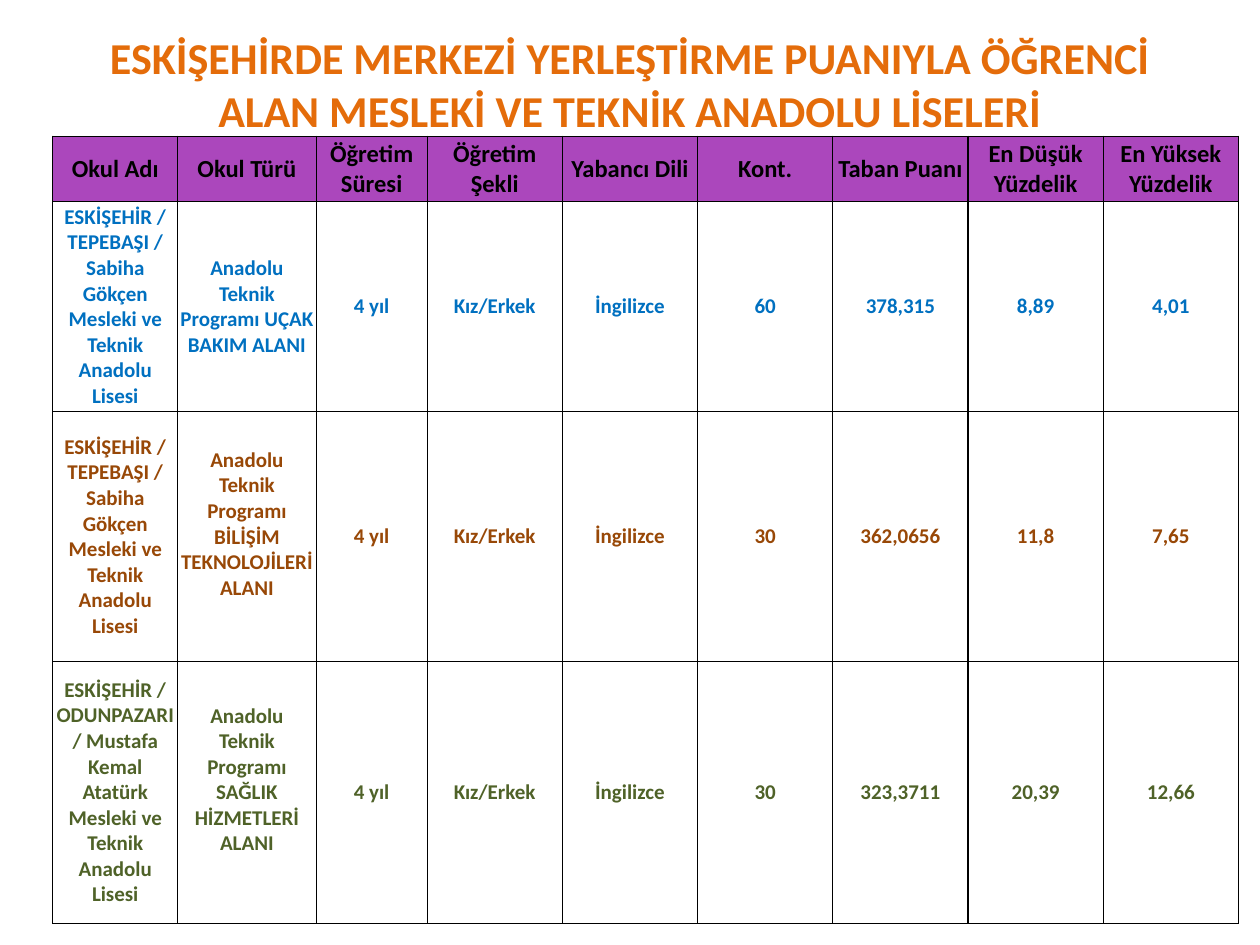
from lxml.etree import SubElement
from pptx import Presentation
from pptx.dml.color import RGBColor
from pptx.enum.text import MSO_ANCHOR, PP_ALIGN
from pptx.oxml.ns import qn
from pptx.util import Inches, Pt

ORANGE = RGBColor(0xE4, 0x6C, 0x0A)
PURPLE = RGBColor(0xAB, 0x47, 0xBC)
BLACK = RGBColor(0x00, 0x00, 0x00)
WHITE = RGBColor(0xFF, 0xFF, 0xFF)
BLUE = RGBColor(0x00, 0x70, 0xC0)
BROWN = RGBColor(0x98, 0x48, 0x07)
GREEN = RGBColor(0x4F, 0x62, 0x28)

HEADINGS = ["Okul Adı", "Okul Türü", "Öğretim Süresi", "Öğretim Şekli", "Yabancı Dili",
            "Kont.", "Taban Puanı", "En Düşük Yüzdelik", "En Yüksek Yüzdelik"]
COMMON = ["4 yıl", "Kız/Erkek", "İngilizce"]
SABIHA = "ESKİŞEHİR / TEPEBAŞI / Sabiha Gökçen Mesleki ve Teknik Anadolu Lisesi"
MUSTAFA = "ESKİŞEHİR / ODUNPAZARI / Mustafa Kemal Atatürk Mesleki ve Teknik Anadolu Lisesi"
PROGRAM = "Anadolu Teknik Programı "
ROWS = [
    (0.52, BLACK, HEADINGS),
    (1.67, BLUE, [SABIHA, PROGRAM + "UÇAK BAKIM ALANI", *COMMON,
                  "60", "378,315", "8,89", "4,01"]),
    (1.98, BROWN, [SABIHA, PROGRAM + "BİLİŞİM TEKNOLOJİLERİ ALANI", *COMMON,
                   "30", "362,0656", "11,8", "7,65"]),
    (2.08, GREEN, [MUSTAFA, PROGRAM + "SAĞLIK HİZMETLERİ ALANI", *COMMON,
                   "30", "323,3711", "20,39", "12,66"]),
]
TABLE_WIDTH = 9.41
FIRST_WIDTHS = [0.99, 1.1, 0.88]
EQUAL_COUNT = len(HEADINGS) - len(FIRST_WIDTHS)
WIDTHS = FIRST_WIDTHS + [(TABLE_WIDTH - sum(FIRST_WIDTHS)) / EQUAL_COUNT] * EQUAL_COUNT


def write(frame, text, size, color):
    para = frame.paragraphs[0]
    para.alignment = PP_ALIGN.CENTER
    span = para.add_run()
    span.text = text
    for name, value in {"name": "Calibri", "size": Pt(size), "bold": True}.items():
        setattr(span.font, name, value)
    span.font.color.rgb = color


def add_borders(cell):
    properties = cell._tc.get_or_add_tcPr()
    for position, side in enumerate(("lnL", "lnR", "lnT", "lnB")):
        line = SubElement(properties, qn(f"a:{side}"), w=str(Pt(0.75)))
        fill = SubElement(line, qn("a:solidFill"))
        SubElement(fill, qn("a:srgbClr"), val=str(BLACK))
        properties.insert(position, line)


deck = Presentation()
deck.slide_width, deck.slide_height = Inches(10), Inches(7.5)
page = deck.slides.add_slide(deck.slide_layouts[5])

title = page.shapes.title
for name, value in {"left": 0.5, "top": 0.08, "width": 9, "height": 1.17}.items():
    setattr(title, name, Inches(value))
title.text_frame.vertical_anchor = MSO_ANCHOR.MIDDLE
write(title.text_frame,
      "ESKİŞEHİRDE MERKEZİ YERLEŞTİRME PUANIYLA ÖĞRENCİ ALAN MESLEKİ VE TEKNİK ANADOLU LİSELERİ",
      25.2, ORANGE)

table = page.shapes.add_table(len(ROWS), len(HEADINGS), Inches(0.42), Inches(1.08),
                              Inches(TABLE_WIDTH), Inches(6.25)).table
table.horz_banding = False
for column, width in zip(table.columns, WIDTHS):
    column.width = Inches(width)

for row_index, (height, color, texts) in enumerate(ROWS):
    table.rows[row_index].height = Inches(height)
    is_header = row_index == 0
    for column_index, text in enumerate(texts):
        cell = table.cell(row_index, column_index)
        cell.vertical_anchor = MSO_ANCHOR.MIDDLE
        for side in ("left", "right", "top", "bottom"):
            setattr(cell, f"margin_{side}", Inches(0.01 if is_header else 0.02))
        if column_index == 1 and row_index > 1:
            cell.margin_bottom = Inches(0.22)
        cell.fill.solid()
        cell.fill.fore_color.rgb = PURPLE if is_header else WHITE
        write(cell.text_frame, text, 14 if is_header else 12, color)
        add_borders(cell)

deck.save("out.pptx")
